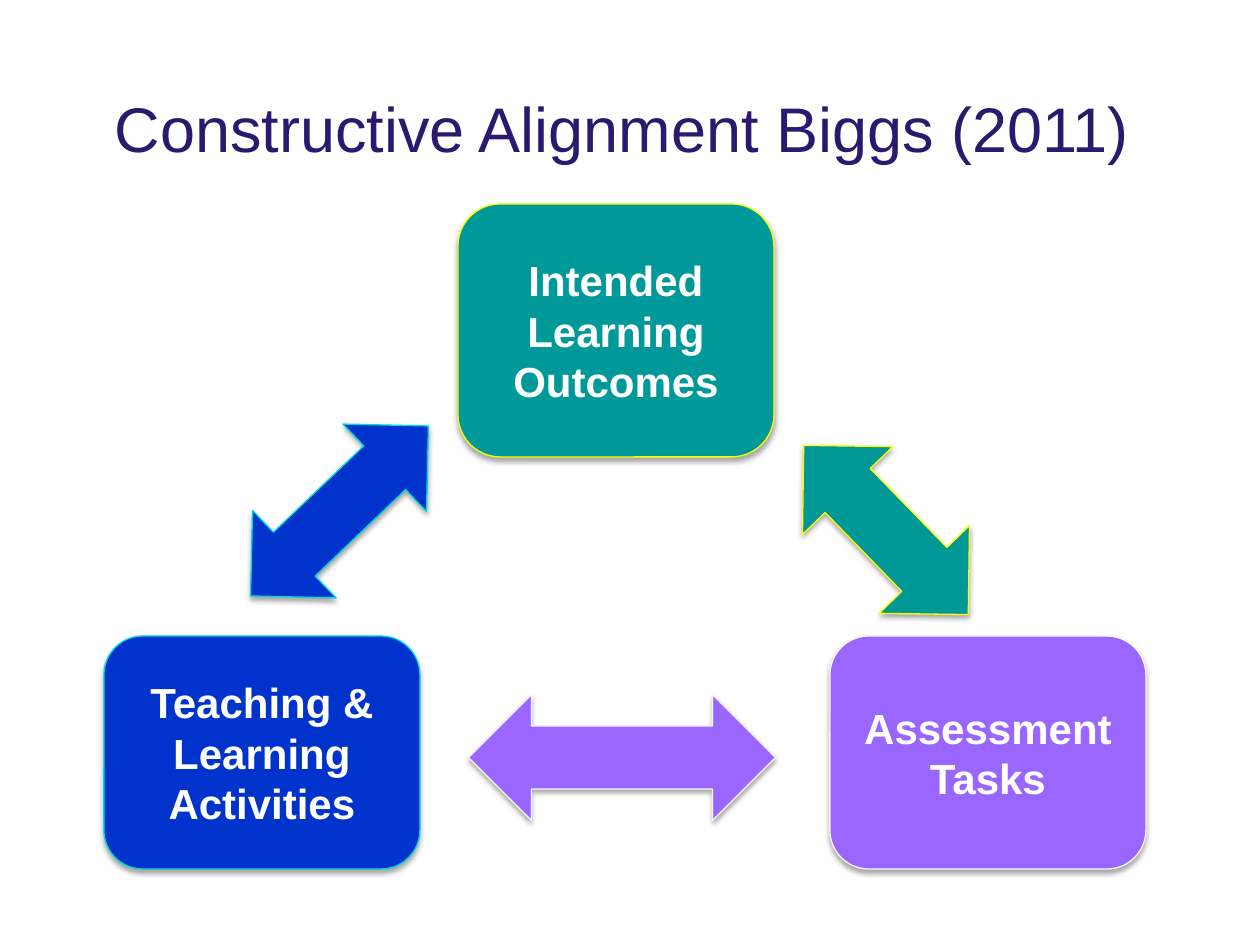
from lxml.etree import SubElement
from pptx import Presentation
from pptx.dml.color import RGBColor
from pptx.enum.shapes import MSO_SHAPE
from pptx.enum.text import MSO_ANCHOR, MSO_AUTO_SIZE, PP_ALIGN
from pptx.oxml.ns import qn
from pptx.util import Emu, Pt

PX = 914400 // 126

WHITE = RGBColor(0xFF, 0xFF, 0xFF)
NAVY = RGBColor(0x2A, 0x19, 0x6F)
BLUE = RGBColor(0x00, 0x33, 0xCC)
CYAN = RGBColor(0x00, 0xD9, 0xD9)
TEAL = RGBColor(0x00, 0x99, 0x99)
DARK_TEAL = RGBColor(0x00, 0x97, 0x97)
YELLOW = RGBColor(0xFF, 0xFF, 0x00)
PURPLE = RGBColor(0x99, 0x66, 0xFF)
PALE = RGBColor(0xF9, 0xF9, 0xF9)

TITLE = "Constructive Alignment Biggs (2011)"
TITLE_BOX = (40, 96, 1164, 105)
TITLE_FONT = {"name": "Arial", "size": Pt(36), "bold": False}
BOX_FONT = {"name": "Arial", "size": Pt(24), "bold": True}

BOX_W = 316
BOXES = [
    ("Teaching & Learning Activities", 104, 636, 233, BLUE, CYAN),
    ("Intended Learning Outcomes", 458, 204, 253, TEAL, YELLOW),
    ("Assessment Tasks", 830, 636, 233, PURPLE, PALE),
]
ARROWS = [
    (886, 530, 126, 236, 135.8, DARK_TEAL, YELLOW),
    (339, 511, 121, 246, 46.3, BLUE, CYAN),
    (622, 757, 126, 307, 270, PURPLE, PALE),
]
SHADOW = {"blurRad": Pt(3.1), "dist": Pt(1.8), "dir": 90 * 60000, "rotWithShape": 0}


def px(*lengths):
    return [Emu(n * PX) for n in lengths]


def write(tf, text, font, color):
    tf.word_wrap = True
    p = tf.paragraphs[0]
    p.alignment = PP_ALIGN.CENTER
    r = p.add_run()
    r.text = text
    for key, value in font.items():
        setattr(r.font, key, value)
    r.font.color.rgb = color
    return p


def add_shape(kind, box, fill, line):
    sp = s.shapes.add_shape(kind, *px(*box))
    sp.fill.solid()
    sp.fill.fore_color.rgb = fill
    sp.line.color.rgb = line
    sp.line.width = Pt(0.75)
    sp.shadow.inherit = False
    effects = sp._element.spPr.find(qn("a:effectLst"))
    shadow = SubElement(effects, qn("a:outerShdw"),
                        {k: str(int(v)) for k, v in SHADOW.items()})
    color = SubElement(shadow, qn("a:srgbClr"), val="000000")
    SubElement(color, qn("a:alpha"), val="35000")
    return sp


prs = Presentation()
prs.slide_width, prs.slide_height = px(1260, 945)
s = prs.slides.add_slide(prs.slide_layouts[5])

title = s.shapes.title
title.left, title.top, title.width, title.height = px(*TITLE_BOX)
title.text_frame.auto_size = MSO_AUTO_SIZE.NONE
title.text_frame.vertical_anchor = MSO_ANCHOR.TOP
write(title.text_frame, TITLE, TITLE_FONT, NAVY).line_spacing = 0.83

for text, x, y, h, fill, line in BOXES:
    sp = add_shape(MSO_SHAPE.ROUNDED_RECTANGLE, (x, y, BOX_W, h), fill, line)
    sp.text_frame.vertical_anchor = MSO_ANCHOR.MIDDLE
    write(sp.text_frame, text, BOX_FONT, WHITE)

for cx, cy, w, h, angle, fill, line in ARROWS:
    box = (cx - w // 2, cy - h // 2, w, h)
    sp = add_shape(MSO_SHAPE.UP_DOWN_ARROW, box, fill, line)
    sp.rotation = angle

prs.save("out.pptx")
